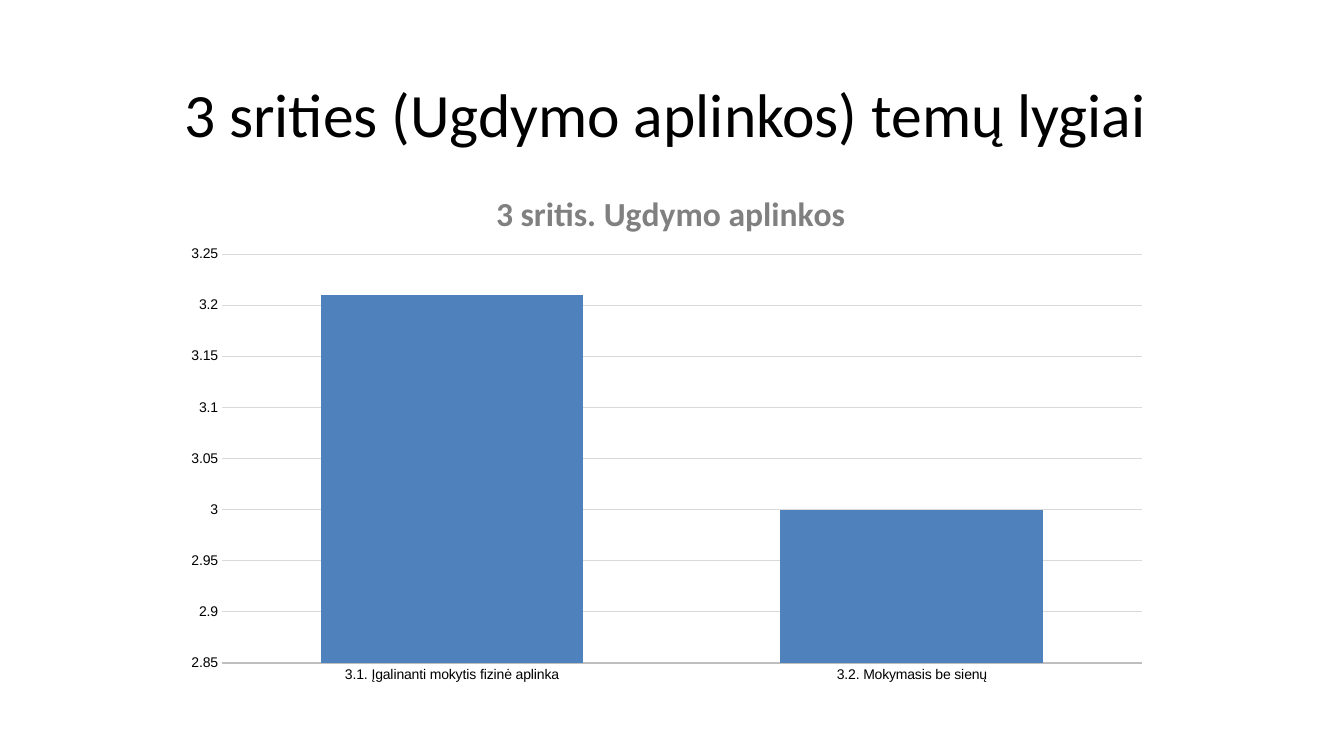
"""Build a slide with a heading and a column chart of theme levels."""
from lxml import etree
from pptx import Presentation
from pptx.chart.data import CategoryChartData
from pptx.dml.color import RGBColor
from pptx.enum.chart import XL_CHART_TYPE, XL_TICK_MARK
from pptx.enum.text import MSO_ANCHOR, PP_ALIGN
from pptx.oxml.ns import qn
from pptx.util import Emu, Pt

COLUMNS = XL_CHART_TYPE.COLUMN_CLUSTERED
NO_TICK = XL_TICK_MARK.NONE
MIDDLE = MSO_ANCHOR.MIDDLE
CENTER = PP_ALIGN.CENTER
EMU_PER_PX = 914400 / 100.8
COLORS = {"text": "000000", "title": "808080", "bar": "4F81BD",
          "axis": "BFBFBF", "grid": "D9D9D9"}
CHART_WIDTH, CHART_HEIGHT = 989, 534


def px(*lengths):
    return [Emu(round(length * EMU_PER_PX)) for length in lengths]


def style_font(font, name, size, color, bold=False):
    font.name = name
    font.size = Pt(size)
    font.bold = bold
    font.color.rgb = RGBColor.from_string(COLORS[color])


deck = Presentation()
deck.slide_width, deck.slide_height = px(1344, 756)
page = deck.slides.add_slide(deck.slide_layouts[6])

heading_box = page.shapes.add_textbox(*px(93, 40, 1159, 146))
heading = heading_box.text_frame
heading.word_wrap = True
heading.vertical_anchor = MIDDLE
heading.text = "3 srities (Ugdymo aplinkos) temų lygiai "
heading.paragraphs[0].alignment = CENTER
style_font(heading.paragraphs[0].runs[0].font, "Calibri", 44, "text")

levels = CategoryChartData()
levels.categories = ["3.1. Įgalinanti mokytis fizinė aplinka",
                     "3.2. Mokymasis be sienų"]
levels.add_series("Series 1", [3.21, 3])
chart = page.shapes.add_chart(
    COLUMNS, *px(172, 159, CHART_WIDTH, CHART_HEIGHT), levels).chart
style_font(chart.font, "Arial", 10, "text")
chart.has_legend = False
chart.has_title = True
title = chart.chart_title.text_frame
title.text = "3 sritis. Ugdymo aplinkos"
style_font(title.paragraphs[0].runs[0].font, "Calibri", 24, "title", True)

plot = chart.plots[0]
plot.gap_width = 75
plot.vary_by_categories = False
bars = plot.series[0]
bars.invert_if_negative = False
bars.format.fill.solid()
bars.format.fill.fore_color.rgb = RGBColor.from_string(COLORS["bar"])

value_axis = chart.value_axis
value_axis.minimum_scale = 2.85
value_axis.maximum_scale = 3.25
value_axis.major_unit = 0.05
value_axis.tick_labels.number_format = "General"
value_axis.tick_labels.number_format_is_linked = False
value_axis.format.line.fill.background()
for axis in (chart.category_axis, value_axis):
    axis.major_tick_mark = NO_TICK
    axis.minor_tick_mark = NO_TICK
for line, color, width in (
        (chart.category_axis.format.line, "axis", 1.5),
        (value_axis.major_gridlines.format.line, "grid", 0.5)):
    line.color.rgb = RGBColor.from_string(COLORS[color])
    line.width = Pt(width)

chart_root = chart.element.find(qn("c:chart"))
title_node = chart_root.find(qn("c:title"))
title_node.find(qn("c:overlay")).set("val", "1")
plot_area = chart_root.find(qn("c:plotArea"))
for node, index, settings in (
        (title_node, 1, {"xMode": "edge", "yMode": "edge",
                         "x": 318 / CHART_WIDTH, "y": 26 / CHART_HEIGHT}),
        (plot_area, 0, {"layoutTarget": "inner", "xMode": "edge", "yMode": "edge",
                        "x": 50 / CHART_WIDTH, "y": 95 / CHART_HEIGHT,
                        "w": 920 / CHART_WIDTH, "h": 409 / CHART_HEIGHT})):
    for old_layout in node.findall(qn("c:layout")):
        node.remove(old_layout)
    layout = etree.Element(qn("c:layout"))
    manual = etree.SubElement(layout, qn("c:manualLayout"))
    for tag, value in settings.items():
        etree.SubElement(manual, qn(f"c:{tag}")).set("val", str(value))
    node.insert(index, layout)

deck.save("out.pptx")
